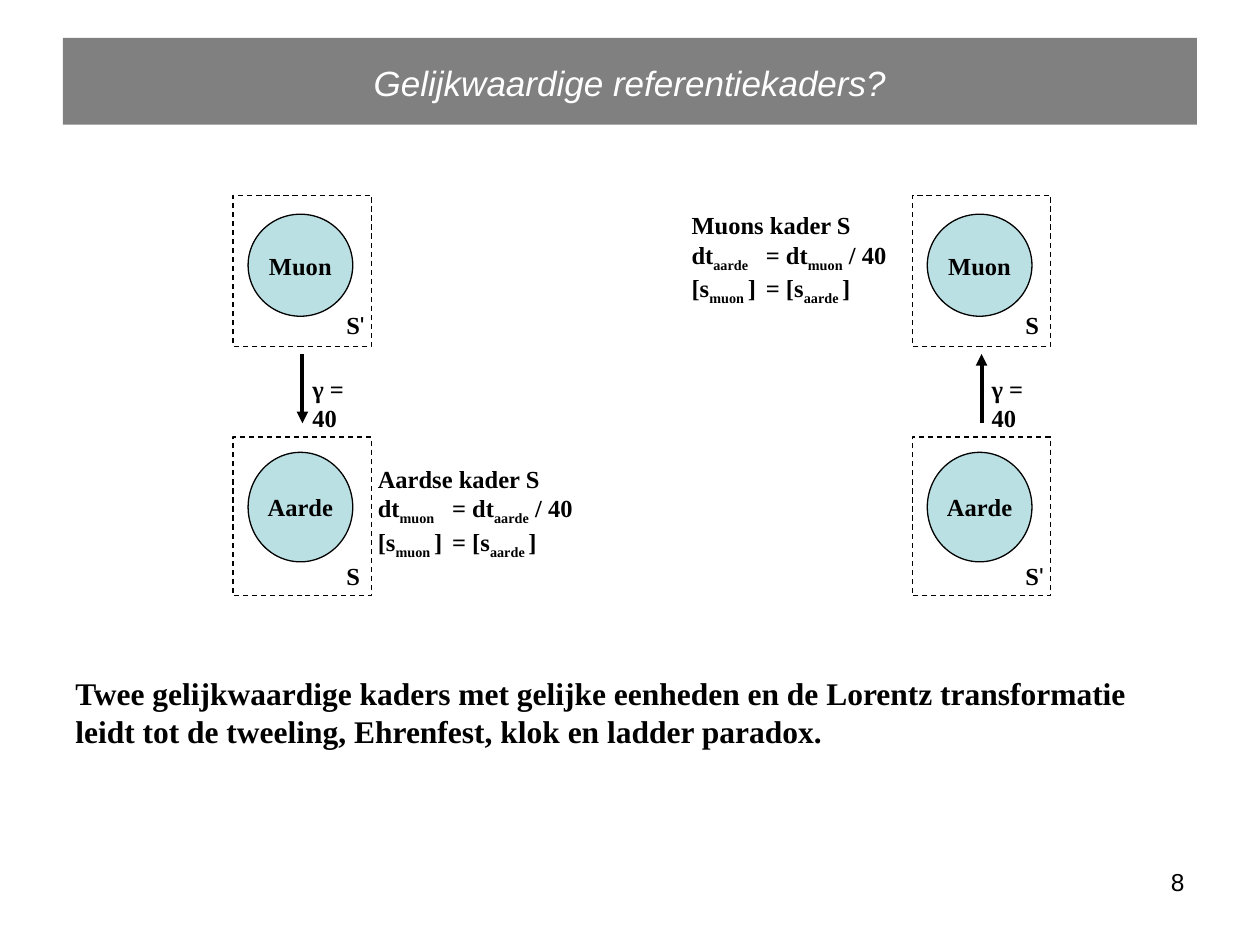
"""Builds a slide comparing the muon frame and the earth frame."""
from lxml.etree import SubElement
from pptx import Presentation
from pptx.dml.color import RGBColor
from pptx.enum.dml import MSO_LINE
from pptx.enum.shapes import MSO_CONNECTOR, MSO_SHAPE
from pptx.enum.text import MSO_ANCHOR, PP_ALIGN
from pptx.oxml.ns import qn
from pptx.util import Pt

COLORS = {"bar": "808080", "circle": "BBE0E3", "black": "000000", "white": "FFFFFF"}
SERIF, SANS = "Times New Roman", "Arial"

deck = Presentation()
deck.slide_width, deck.slide_height = Pt(720), Pt(540)
page = deck.slides.add_slide(deck.slide_layouts[6])


def write(shape, lines, size=14, font=SERIF, color="black", align=PP_ALIGN.LEFT, wrap=False):
    """Fills a shape with lines; every second part between bars is a subscript."""
    frame = shape.text_frame
    frame.word_wrap = wrap
    for number, line in enumerate(lines):
        para = frame.add_paragraph() if number else frame.paragraphs[0]
        para.alignment = align
        if "\t" in line:
            tabs = SubElement(para._p.get_or_add_pPr(), qn("a:tabLst"))
            SubElement(tabs, qn("a:tab"), pos=str(Pt(42.5)), algn="l")
        for index, part in enumerate(line.split("|")):
            span = para.add_run()
            span.text = part
            span.font.size, span.font.name = Pt(size), font
            span.font.bold = font == SERIF
            span.font.color.rgb = RGBColor.from_string(COLORS[color])
            if index % 2:
                span.font._element.set("baseline", "-25000")
    return frame


def add_shape(kind, left, top, width, height, fill=None, line=None):
    """Adds a preset shape with an optional fill and outline."""
    shape = page.shapes.add_shape(kind, Pt(left), Pt(top), Pt(width), Pt(height))
    shape.shadow.inherit = False
    if fill:
        shape.fill.solid()
        shape.fill.fore_color.rgb = RGBColor.from_string(COLORS[fill])
    else:
        shape.fill.background()
    if line:
        shape.line.color.rgb = RGBColor.from_string(COLORS[line])
        shape.line.width = Pt(0.75)
    else:
        shape.line.fill.background()
    return shape


add_shape(MSO_SHAPE.RECTANGLE, 36, 21.6, 648, 49.7, fill="bar")
title = page.shapes.add_textbox(Pt(39.4), Pt(31.7), Pt(641.2), Pt(31))
title_frame = write(title, ["Gelijkwaardige referentiekaders?"], 20, SANS, "white", PP_ALIGN.CENTER, True)
title_frame.paragraphs[0].runs[0].font.italic = True

bodies = [
    ("Muon", 111.6, 86.4, 122.4, 58.3, 173.5),
    ("Aarde", 249.8, 90.7, 258.5, 62.6, 316.8),
]
arrow_ends = [202.3, 241.9]
columns = [(133.2, "Aarde", arrow_ends), (521.3, "Muon", arrow_ends[::-1])]

for left, rest_body, (start, end) in columns:
    for name, box_top, box_height, circle_top, circle_height, label_top in bodies:
        box = add_shape(MSO_SHAPE.RECTANGLE, left, box_top, 79.2, box_height, line="black")
        box.line.dash_style = MSO_LINE.DASH
        circle = add_shape(MSO_SHAPE.OVAL, left + 8.6, circle_top, 59.8, circle_height, "circle", "black")
        write(circle, [name], align=PP_ALIGN.CENTER).vertical_anchor = MSO_ANCHOR.MIDDLE
        label = page.shapes.add_textbox(Pt(left + 57.6), Pt(label_top), Pt(25), Pt(24.5))
        label_para = write(label, ["S"]).paragraphs[0]
        if name != rest_body:
            prime = label_para.add_run()
            prime.text = "'"
            prime.font.size, prime.font.name = Pt(14), SANS
            prime.font.color.rgb = RGBColor.from_string(COLORS["black"])

    arrow = page.shapes.add_connector(
        MSO_CONNECTOR.STRAIGHT, Pt(left + 39.6), Pt(start), Pt(left + 39.6), Pt(end))
    arrow.line.color.rgb = RGBColor.from_string(COLORS["black"])
    arrow.line.width = Pt(2.25)
    SubElement(arrow.line._get_or_add_ln(), qn("a:tailEnd"), type="triangle")
    SubElement(arrow._element.spPr, qn("a:effectLst"))
    gamma = page.shapes.add_textbox(Pt(left + 38.2), Pt(210.2), Pt(49.7), Pt(24.5))
    write(gamma, ["γ = 40"])

frames = [
    ("Aardse kader S", "muon", "aarde", 208.8, 261.4),
    ("Muons kader S", "aarde", "muon", 388.1, 116.6),
]
for heading, moving, resting, left, top in frames:
    formulas = page.shapes.add_textbox(Pt(left), Pt(top), Pt(129.6), Pt(58.3))
    write(formulas, [heading, f"dt|{moving}|\t= dt|{resting}| / 40", "[s|muon |]\t= [s|aarde |]"])

conclusion = page.shapes.add_textbox(Pt(36), Pt(381.6), Pt(648), Pt(51))
write(conclusion, [
    "Twee gelijkwaardige kaders met gelijke eenheden en de Lorentz transformatie "
    "leidt tot de tweeling, Ehrenfest, klok en ladder paradox."], 18, wrap=True)

page_number = page.shapes.add_textbox(Pt(516.2), Pt(491.8), Pt(167.8), Pt(37.4))
write(page_number, ["8"], font=SANS, align=PP_ALIGN.RIGHT, wrap=True)

deck.save("out.pptx")
